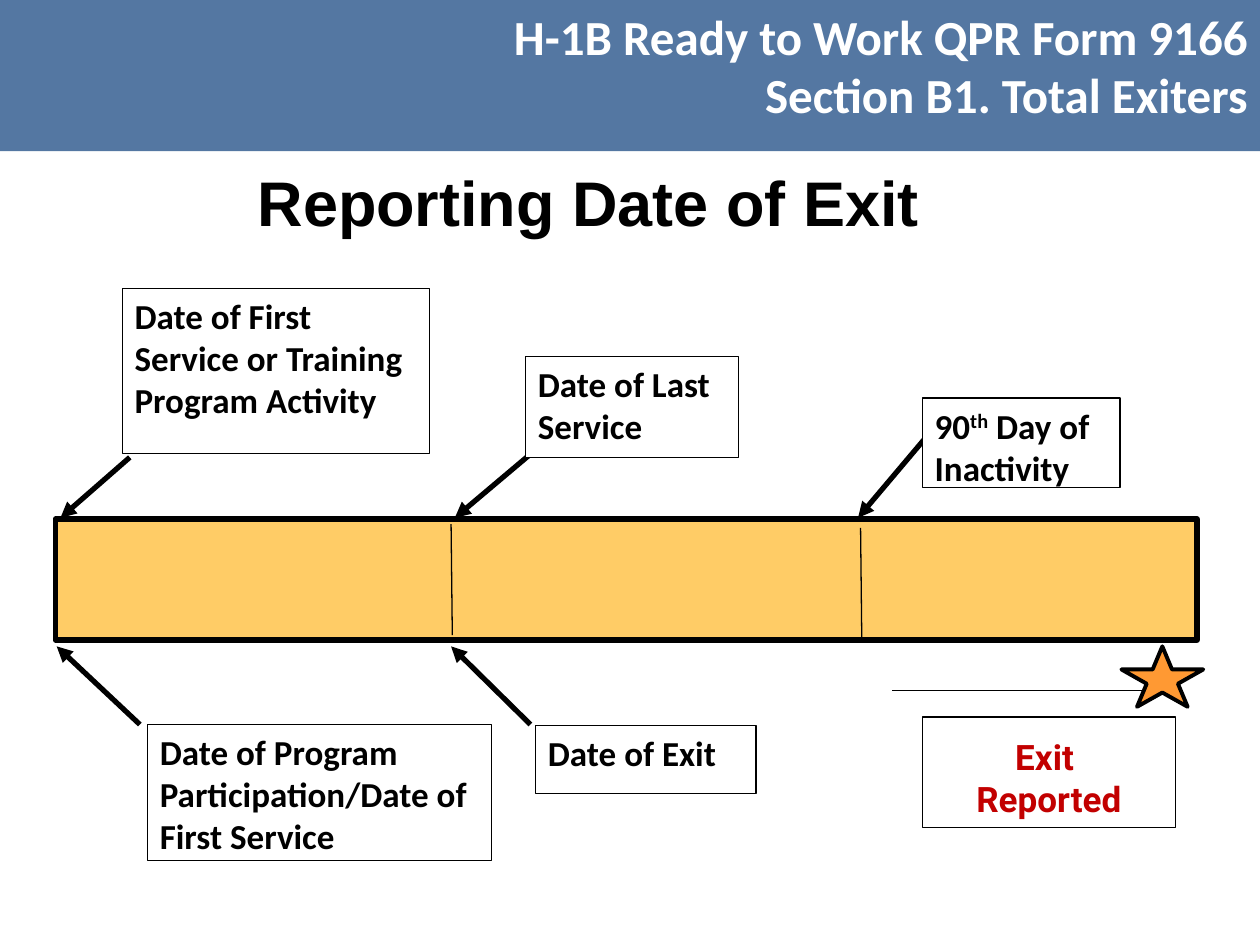
from lxml.etree import SubElement
from pptx import Presentation
from pptx.dml.color import RGBColor
from pptx.enum.shapes import MSO_CONNECTOR as Connector, MSO_SHAPE as Shape
from pptx.enum.text import MSO_ANCHOR as Anchor, PP_ALIGN as Align
from pptx.oxml.ns import qn
from pptx.util import Inches, Pt

BLACK = RGBColor(0x00, 0x00, 0x00)
WHITE = RGBColor(0xFF, 0xFF, 0xFF)
BLUE = RGBColor(0x37, 0x60, 0x92)
YELLOW = RGBColor(0xFF, 0xCC, 0x66)
ORANGE = RGBColor(0xFF, 0x99, 0x33)
RED = RGBColor(0xC2, 0x00, 0x00)


def write(shape, *paragraphs, font="Calibri", size=20, color=BLACK,
          align=Align.LEFT, anchor=Anchor.TOP, top=0.05):
    """Fill a shape with paragraphs; a "^" pair encloses superscript text."""
    frame = shape.text_frame
    frame.word_wrap = True
    frame.vertical_anchor = anchor
    frame.margin_top = Inches(top)
    for index, text in enumerate(paragraphs):
        paragraph = frame.add_paragraph() if index else frame.paragraphs[0]
        paragraph.alignment = align
        for line_number, line in enumerate(text.split("\n")):
            if line_number:
                paragraph.add_line_break()
            for part_number, part in enumerate(line.split("^")):
                run = paragraph.add_run()
                run.text = part
                run.font.name = font
                run.font.size = Pt(size)
                run.font.bold = True
                run.font.color.rgb = color
                if part_number % 2:
                    run.font._element.set("baseline", "30000")


class Timeline:
    """Holds the slide and its drawing style."""

    thin, thick = 0.75, 3

    def __init__(self, slide):
        self.slide = slide

    def shape(self, kind, box, fill, line=None, alpha=None):
        shape = self.slide.shapes.add_shape(kind, *map(Inches, box))
        shape.shadow.inherit = False
        shape.fill.solid()
        shape.fill.fore_color.rgb = fill
        if alpha is not None:
            color = shape._element.spPr.find(qn("a:solidFill"))[0]
            SubElement(color, qn("a:alpha")).set("val", str(alpha * 1000))
        if line is None:
            shape.line.fill.background()
        else:
            shape.line.color.rgb = BLACK
            shape.line.width = Pt(line)
        return shape

    def text(self, box, *paragraphs, **style):
        write(self.slide.shapes.add_textbox(*map(Inches, box)), *paragraphs, **style)

    def label(self, box, *paragraphs, **style):
        write(self.shape(Shape.RECTANGLE, box, WHITE, self.thin), *paragraphs, **style)

    def line(self, *ends, arrow=False):
        line = self.slide.shapes.add_connector(Connector.STRAIGHT, *map(Inches, ends))
        line.line.color.rgb = BLACK
        line.line.width = Pt(self.thick if arrow else self.thin)
        properties = line._element.spPr
        if arrow:
            SubElement(properties.find(qn("a:ln")), qn("a:tailEnd")).set("type", "triangle")
        SubElement(properties, qn("a:effectLst"))


def main():
    presentation = Presentation()
    presentation.slide_width = Inches(10)
    presentation.slide_height = Inches(7.5)
    timeline = Timeline(presentation.slides.add_slide(presentation.slide_layouts[6]))

    # Header band and title
    timeline.shape(Shape.RECTANGLE, (-0.01, 0, 10.01, 1.2), BLUE, alpha=85)
    timeline.text((0.54, 1.17, 8.26, 0.85), "Reporting Date of Exit", font="Arial",
                  size=36, align=Align.CENTER, anchor=Anchor.MIDDLE)

    # Timeline bar
    timeline.shape(Shape.RECTANGLE, (0.44, 4.12, 9.06, 0.96), YELLOW, timeline.thick)

    # Arrows to the bar, from above and below
    for ends in (
        (1.03, 3.63, 0.48, 4.11),
        (4.31, 3.52, 3.61, 4.11),
        (7.35, 3.47, 6.81, 4.11),
        (1.11, 5.75, 0.45, 5.13),
        (4.21, 5.75, 3.58, 5.13),
    ):
        timeline.line(*ends, arrow=True)

    # Bar dividers and the line to the star
    for ends in (
        (3.58, 4.16, 3.59, 5.04),
        (6.83, 4.19, 6.84, 5.09),
        (7.08, 5.48, 9.09, 5.48),
    ):
        timeline.line(*ends)
    timeline.shape(Shape.STAR_5_POINT, (8.9, 5.13, 0.65, 0.48), ORANGE, 2.25)

    # Milestone labels
    for box, text in (
        ((0.97, 2.29, 2.44, 1.31), "Date of First Service or Training Program Activity"),
        ((4.17, 2.83, 1.69, 0.8), "Date of Last Service"),
        ((7.32, 3.16, 1.57, 0.71), "90^th^ Day of Inactivity"),
        ((1.17, 5.75, 2.73, 1.08), "Date of Program Participation/Date of First Service"),
        ((4.25, 5.76, 1.75, 0.54), "Date of Exit"),
    ):
        timeline.label(box, text)
    timeline.label((7.32, 5.69, 2.01, 0.88), "Exit ", "Reported", font="Roboto",
                   color=RED, align=Align.CENTER, top=0.15)

    # Header text
    timeline.text((3.67, 0, 6.33, 1.17),
                  "H-1B Ready to Work QPR Form 9166\nSection B1. Total Exiters",
                  size=28, color=WHITE, align=Align.RIGHT)

    presentation.save("out.pptx")


if __name__ == "__main__":
    main()
